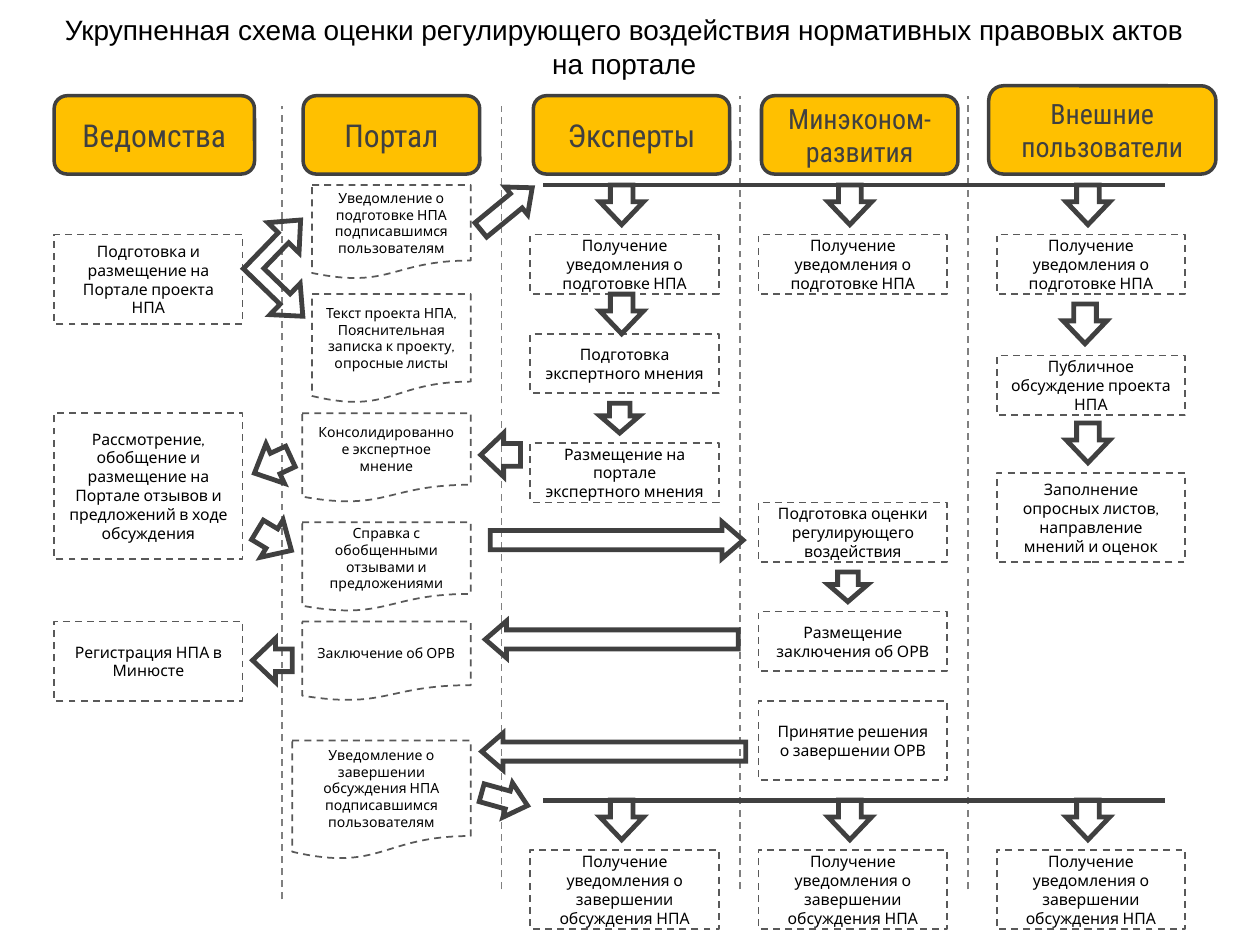
from lxml.etree import SubElement
from pptx import Presentation
from pptx.dml.color import RGBColor
from pptx.enum.dml import MSO_LINE
from pptx.enum.shapes import MSO_CONNECTOR, MSO_SHAPE
from pptx.enum.text import MSO_ANCHOR, PP_ALIGN
from pptx.oxml.ns import qn
from pptx.util import Inches, Mm, Pt

COLORS = {"amber": "FFC000", "dark": "404040", "border": "595959",
          "divider": "808080", "text": "000000", "paper": "FFFFFF"}
STEP = Mm(2)
LEFT, TOP = Inches(0.43), Inches(0.76)
AGENCY, PORTAL, EXPERT, MINISTRY, PUBLIC = 0, 25, 48, 71, 95
BOX_WIDTH = 19
RULE_ROWS = (9, 71)
ARROW_CENTERS = (57.2, 80.2, 104.2)

HEADERS = [
    ("Ведомства", 0, 0, 20.2, 7.9, 18),
    ("Портал", 25.1, 0, 17.8, 7.9, 18),
    ("Эксперты", 48.3, 0, 19.8, 7.9, 18),
    ("Минэконом-\nразвития", 71.3, 0, 19.8, 7.9, 16),
    ("Внешние пользователи", 94.2, -1, 22.9, 8.9, 16),
]
DIVIDERS = [(23, 1, 81), (45.1, 1, 80), (69.1, 0, 80), (92.1, 0, 80)]
STEPS = [
    ("Подготовка и размещение на Портале проекта НПА", AGENCY, 14, 9),
    ("Рассмотрение, обобщение и размещение на Портале отзывов и предложений "
     "в ходе обсуждения", AGENCY, 32, 14.7),
    ("Регистрация НПА в Минюсте", AGENCY, 53, 8),
    ("Подготовка экспертного мнения", EXPERT, 24, 6),
    ("Размещение на портале экспертного мнения", EXPERT, 35, 6),
    ("Подготовка оценки регулирующего воздействия", MINISTRY, 41, 6),
    ("Размещение заключения об ОРВ", MINISTRY, 52, 6),
    ("Принятие решения о завершении ОРВ", MINISTRY, 61, 8),
    ("Публичное обсуждение проекта НПА", PUBLIC, 26.2, 6),
    ("Заполнение опросных листов, направление мнений и оценок", PUBLIC, 38, 9),
]
NOTICES = [
    ("Получение уведомления о подготовке НПА", 14, 6),
    ("Получение уведомления о завершении обсуждения НПА", 76, 8),
]
DOCUMENTS = [
    ("Уведомление о подготовке НПА подписавшимся пользователям", 26, 9, 16, 9.5),
    ("Текст проекта НПА,\nПояснительная записка к проекту, опросные листы", 26, 20, 16, 11),
    ("Консолидированное экспертное мнение", PORTAL, 32, 17, 9),
    ("Справка с обобщенными отзывами и предложениями", PORTAL, 43, 17, 9),
    ("Заключение об ОРВ", PORTAL, 53, 17, 8),
    ("Уведомление о завершении обсуждения НПА подписавшимся пользователям", 24, 65, 18, 12),
]
ARROWS = [
    (57.2, 22, 4, 4.4, 90), (57, 32.5, 3, 4, 90), (80, 49.5, 3, 4, 90),
    (103.9, 23, 4, 4.4, 90), (104.2, 35, 4, 4.4, 90),
    (45, 36.2, 4, 4.4, 180), (22, 56.9, 4, 4.4, 180),
    (22, 37.2, 4, 4.4, 155.1), (22.2, 44.8, 4, 4.4, 31.1),
    (56.7, 44.8, 25.5, 3.7, 0), (56.2, 54.8, 25.5, 3.7, 180),
    (56.4, 66.1, 26.6, 3.7, 180),
    (45.6, 11.4, 6.7, 3.6, 320.6), (45.4, 70.9, 4.8, 3.6, 15.6),
]


def color(name):
    """Return the named palette colour."""
    return RGBColor.from_string(COLORS[name])


def place(column, row):
    """Convert a grid position to slide coordinates."""
    return LEFT + int(column * STEP), TOP + int(row * STEP)


def style_line(line, name, width, dashed=False):
    """Set the colour, width and dash of a line."""
    line.color.rgb = color(name)
    line.width = Pt(width)
    if dashed:
        line.dash_style = MSO_LINE.DASH


def write(shape, text, font, size, name, margins=(0.11, 0.06)):
    """Write centred, wrapped text into a shape."""
    frame = shape.text_frame
    frame.text = text
    frame.word_wrap = True
    frame.vertical_anchor = MSO_ANCHOR.MIDDLE
    frame.margin_left = frame.margin_right = Inches(margins[0])
    frame.margin_top = frame.margin_bottom = Inches(margins[1])
    for paragraph in frame.paragraphs:
        paragraph.alignment = PP_ALIGN.CENTER
        paragraph.font.name = font
        paragraph.font.size = Pt(size)
        paragraph.font.color.rgb = color(name)


def add_shape(slide, kind, column, row, width, height):
    """Add a preset shape without shadow on the grid."""
    shape = slide.shapes.add_shape(kind, *place(column, row),
                                   int(width * STEP), int(height * STEP))
    shape.shadow.inherit = False
    return shape


def add_title(slide, text):
    """Add the slide title."""
    box = slide.shapes.add_textbox(Inches(0.27), Inches(0.14), Inches(9.37), Inches(0.46))
    write(box, text, "Arial", 16, "text", (0.1, 0.05))


def add_header(slide, text, column, row, width, height, size):
    """Add a rounded lane header."""
    shape = add_shape(slide, MSO_SHAPE.ROUNDED_RECTANGLE, column, row, width, height)
    shape.fill.solid()
    shape.fill.fore_color.rgb = color("amber")
    style_line(shape.line, "dark", 2)
    write(shape, text, "Roboto Condensed", size, "dark")


def add_box(slide, kind, text, column, row, width, height, size):
    """Add a dashed, nearly transparent box with text."""
    shape = add_shape(slide, kind, column, row, width, height)
    shape.fill.solid()
    shape.fill.fore_color.rgb = color("paper")
    fill = shape.fill._xPr.find(qn("a:solidFill"))
    SubElement(fill[0], qn("a:alpha"), val="13000")
    style_line(shape.line, "border", 1, dashed=True)
    write(shape, text, "Cabin", size, "text")


def add_arrow(slide, center, middle, length, thickness, rotation,
              kind=MSO_SHAPE.RIGHT_ARROW, adjustments=(0.519, 0.576)):
    """Add an outlined block arrow around its centre."""
    shape = add_shape(slide, kind, center - length / 2, middle - thickness / 2,
                      length, thickness)
    for index, value in enumerate(adjustments):
        shape.adjustments[index] = value
    shape.rotation = rotation
    shape.fill.background()
    style_line(shape.line, "dark", 2.75)
    SubElement(shape.line._ln, qn("a:miter"), lim="800000")


def add_line(slide, start, end, name, width, dashed=False):
    """Add a straight line between two grid points."""
    line = slide.shapes.add_connector(MSO_CONNECTOR.STRAIGHT, *place(*start), *place(*end))
    style_line(line.line, name, width, dashed)
    SubElement(line._element.spPr, qn("a:effectLst"))


def main():
    """Build the regulatory assessment scheme."""
    presentation = Presentation()
    presentation.slide_width, presentation.slide_height = Inches(10), Inches(7.5)
    slide = presentation.slides.add_slide(presentation.slide_layouts[6])

    add_title(slide, "Укрупненная схема оценки регулирующего воздействия "
                     "нормативных правовых актов на портале")
    for header in HEADERS:
        add_header(slide, *header)
    for column, top, bottom in DIVIDERS:
        add_line(slide, (column, bottom), (column, top), "divider", 1, dashed=True)
    notices = [(text, column, row, height) for text, row, height in NOTICES
               for column in (EXPERT, MINISTRY, PUBLIC)]
    for text, column, row, height in STEPS + notices:
        add_box(slide, MSO_SHAPE.RECTANGLE, text, column, row, BOX_WIDTH, height, 9)
    for document in DOCUMENTS:
        add_box(slide, MSO_SHAPE.FLOWCHART_DOCUMENT, *document, 8)
    for row in RULE_ROWS:
        add_line(slide, (49.3, row), (112, row), "dark", 2.75)
        for center in ARROW_CENTERS:
            add_arrow(slide, center, row + 2, 4, 4.4, 90)
    for arrow in ARROWS:
        add_arrow(slide, *arrow)
    add_arrow(slide, 23.4, 17.4, 9, 9.1, 134.1, MSO_SHAPE.LEFT_UP_ARROW,
              (0.162, 0.243, 0.277))
    presentation.save("out.pptx")


if __name__ == "__main__":
    main()
